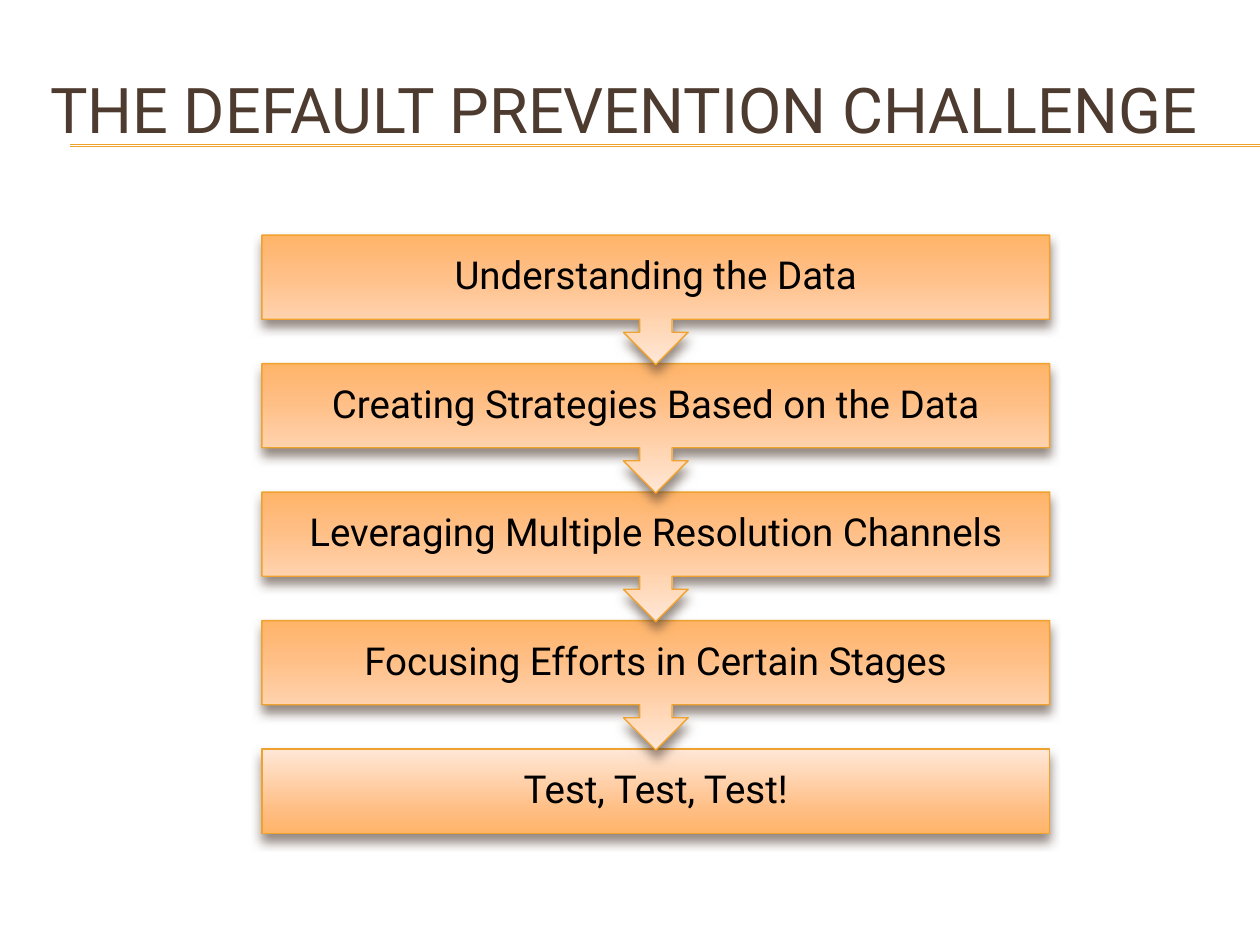
from dataclasses import dataclass

from lxml import etree
from pptx import Presentation
from pptx import oxml
from pptx.dml import color
from pptx.enum import shapes, text
from pptx.oxml import ns
from pptx.util import Cm, Pt


@dataclass(frozen=True)
class Theme:
    """Colours, font and sizes of the slide."""
    font: str = "Roboto"
    brown: str = "4E3B30"
    gold: str = "F0A22E"
    black: str = "000000"
    gradient: tuple = ((0, "FFE7D7"), (72, "FFBE84"), (100, "FFB468"))
    title_size: float = 36
    step_size: float = 22
    rule_width: float = 0.75
    border_width: float = 0.79


THEME = Theme()
STEPS = (
    "Understanding the Data",
    "Creating Strategies Based on the Data",
    "Leveraging Multiple Resolution Channels",
    "Focusing Efforts in Certain Stages",
    "Test, Test, Test!",
)
STEP_LEFT, STEP_TOP, STEP_WIDTH = Cm(5.28), Cm(4.74), Cm(15.88)
STEP_HEIGHT, CALLOUT_HEIGHT, STEP_PITCH = Cm(1.7), Cm(2.61), Cm(2.59)


def add_text(slide, words, box, *, size, ink, align=None, inset=None, spacing=None, after=None):
    """Add a vertically centred text box with the given format."""
    frame = slide.shapes.add_textbox(*box).text_frame
    frame.word_wrap = True
    frame.vertical_anchor = text.MSO_ANCHOR.MIDDLE
    if inset is not None:
        frame.margin_left = frame.margin_right = inset
        frame.margin_top = frame.margin_bottom = inset
    line = frame.paragraphs[0]
    line.alignment, line.line_spacing, line.space_after = align, spacing, after
    run = line.add_run()
    run.text = words
    run.font.name, run.font.size = THEME.font, Pt(size)
    run.font.color.rgb = color.RGBColor.from_string(ink)


def add_rule(slide, height):
    """Add a gold rule below the title, running to the right edge."""
    rule = slide.shapes.add_connector(
        shapes.MSO_CONNECTOR.STRAIGHT, Cm(1.42), height, Cm(25.4), height)
    rule.line.color.rgb = color.RGBColor.from_string(THEME.gold)
    rule.line.width = Pt(THEME.rule_width)
    etree.SubElement(rule._element.spPr, ns.qn("a:effectLst"))


def style_step(step):
    """Give a step its gradient, border and soft shadow."""
    stops = "".join(
        f'<a:gs pos="{place * 1000}"><a:srgbClr val="{tint}"/></a:gs>'
        for place, tint in THEME.gradient)
    properties = step._element.spPr
    properties.append(oxml.parse_xml(
        f'<a:gradFill {ns.nsdecls("a")} rotWithShape="1"><a:gsLst>{stops}</a:gsLst>'
        '<a:lin ang="5400000" scaled="0"/></a:gradFill>'))
    step.line.color.rgb = color.RGBColor.from_string(THEME.gold)
    step.line.width = Pt(THEME.border_width)
    step.shadow.inherit = False
    properties.find(ns.qn("a:effectLst")).append(oxml.parse_xml(
        f'<a:outerShdw {ns.nsdecls("a")} blurRad="{Pt(6)}" dist="{Pt(4)}" dir="5400000" '
        f'rotWithShape="0"><a:srgbClr val="{THEME.brown}"><a:alpha val="60000"/>'
        '</a:srgbClr></a:outerShdw>'))


def add_step(slide, index, words):
    """Add one step of the flow with its label, the last one without an arrow."""
    top = STEP_TOP + index * STEP_PITCH
    is_last = index == len(STEPS) - 1
    outline = shapes.MSO_SHAPE.RECTANGLE if is_last else shapes.MSO_SHAPE.UP_ARROW_CALLOUT
    height = STEP_HEIGHT if is_last else CALLOUT_HEIGHT
    step = slide.shapes.add_shape(outline, STEP_LEFT, top, STEP_WIDTH, height)
    step.rotation = 0 if is_last else 180
    style_step(step)
    add_text(slide, words, (STEP_LEFT, top, STEP_WIDTH, STEP_HEIGHT),
             size=THEME.step_size, ink=THEME.black, align=text.PP_ALIGN.CENTER,
             inset=Cm(0.43), spacing=0.9, after=Pt(0.35 * THEME.step_size))


def main():
    """Build the slide and save it."""
    deck = Presentation()
    deck.slide_width, deck.slide_height = Cm(25.4), Cm(19.05)
    slide = deck.slides.add_slide(deck.slide_layouts[6])
    for height in (Cm(2.92), Cm(2.95)):
        add_rule(slide, height)
    add_text(slide, "THE DEFAULT PREVENTION CHALLENGE",
             (Cm(0.76), Cm(1.02), Cm(24.13), Cm(2.34)),
             size=THEME.title_size, ink=THEME.brown)
    for index, words in reversed(list(enumerate(STEPS))):
        add_step(slide, index, words)
    deck.save("out.pptx")


if __name__ == "__main__":
    main()
